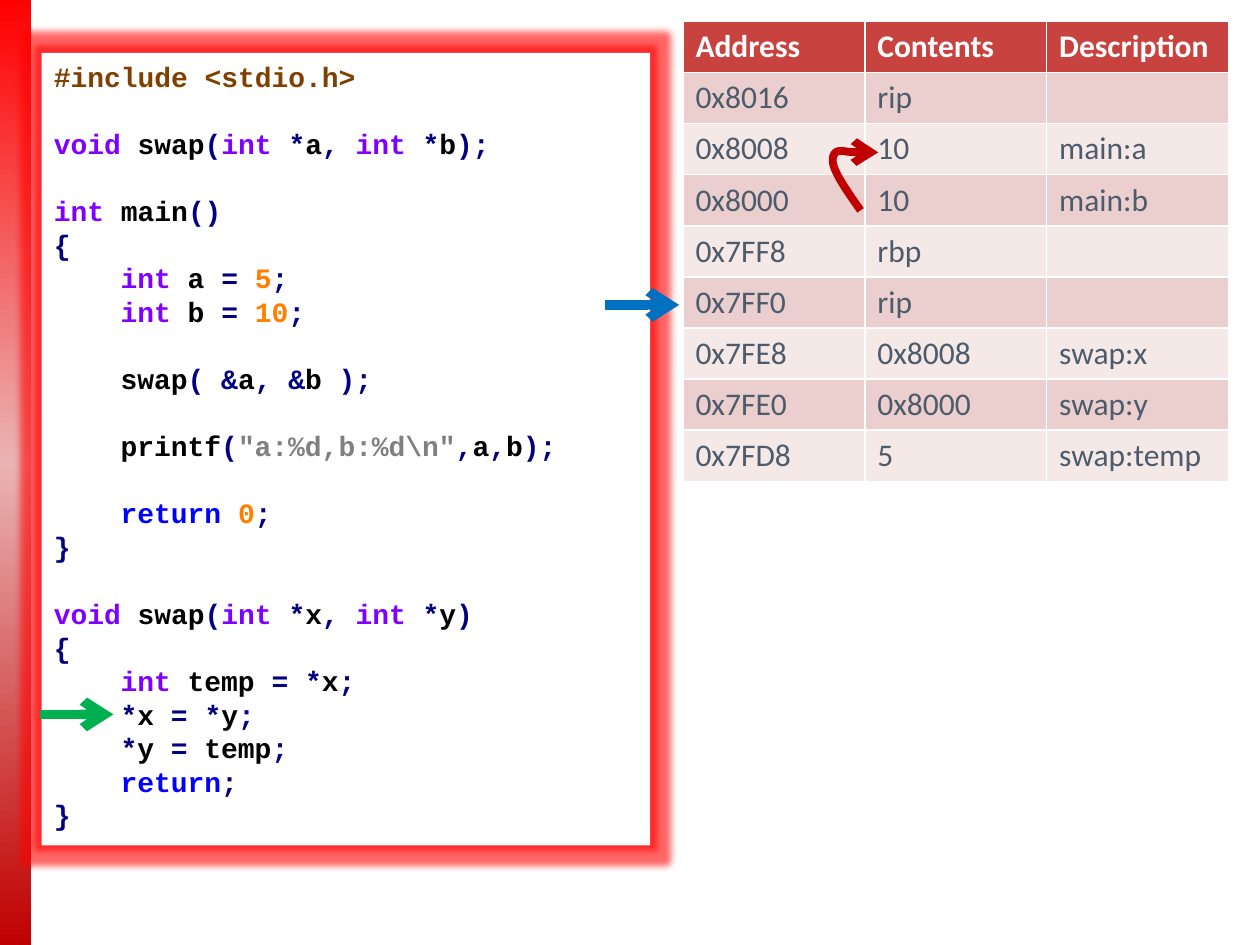
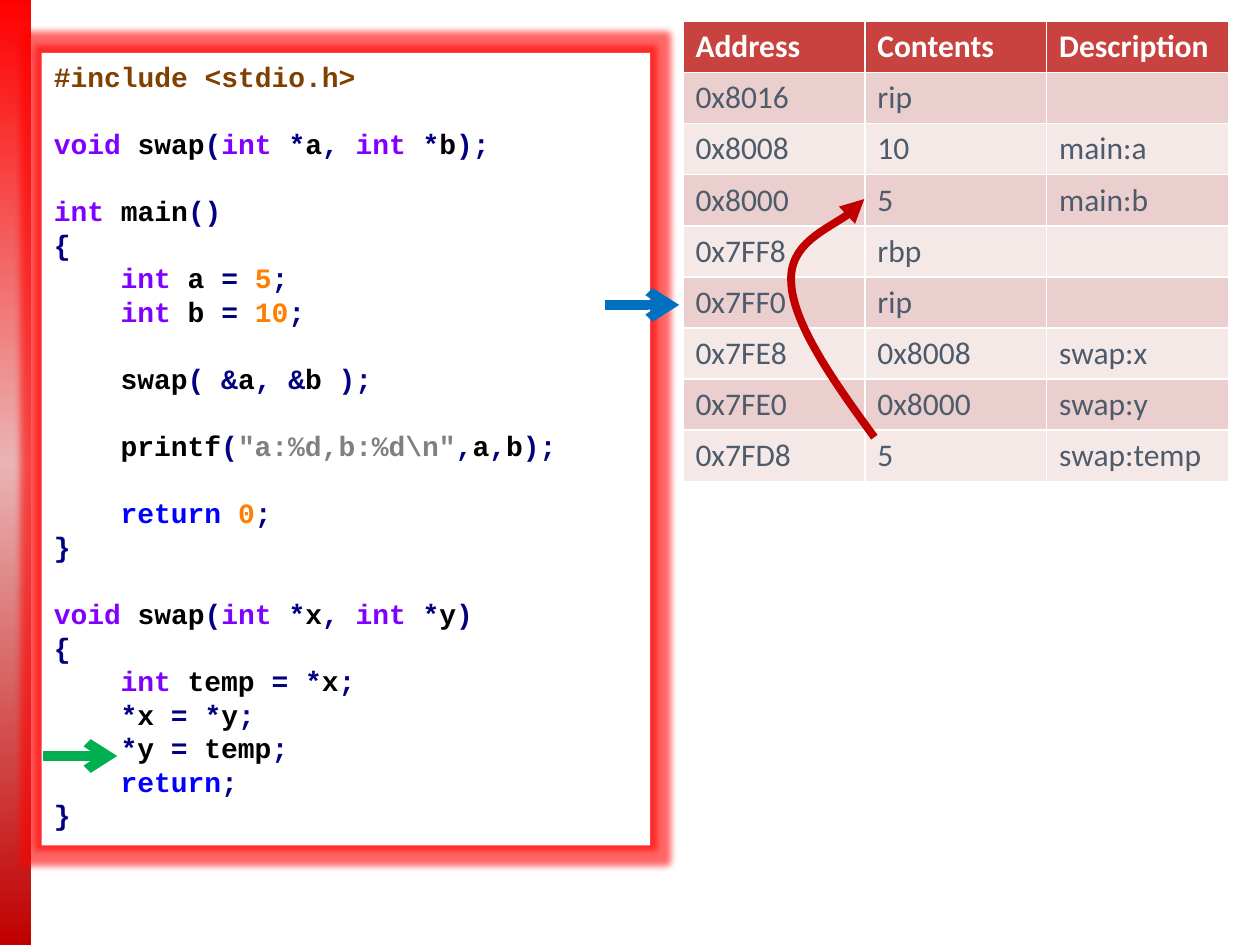
from dataclasses import dataclass
from itertools import groupby

from pptx import Presentation
from pptx.dml.color import RGBColor
from pptx.enum.shapes import MSO_CONNECTOR, MSO_SHAPE
from pptx.enum.text import MSO_ANCHOR, PP_ALIGN
from pptx.oxml import parse_xml
from pptx.oxml.ns import nsdecls, qn
from pptx.util import Inches, Pt

COLORS = {
    "white": "FFFFFF",
    "band_top": "FF0000",
    "band_middle": "E9B4B3",
    "band_bottom": "C00000",
    "glow": "FF0000",
    "directive": "804000",
    "type": "8000FF",
    "keyword": "0000FF",
    "number": "FF8000",
    "string": "808080",
    "symbol": "000080",
    "plain": "000000",
    "header": "C84340",
    "odd_row": "EBCFCF",
    "even_row": "F5E9E8",
    "cell_text": "4D5B6B",
    "current_line": "00B050",
    "stack_frame": "0070C0",
    "copy": "C00000",
}
WORDS = {"void": "type", "int": "type", "return": "keyword"}
CODE_FONT = "Courier New"
TABLE_FONT = "Calibri"
LINE_HEIGHT = Pt(19.2)
INDENT = Inches(0.53)

PROGRAM = r"""#include <stdio.h>

void swap(int *a, int *b);

int main()
{
    int a = 5;
    int b = 10;

    swap( &a, &b );

    printf("a:%d,b:%d\n",a,b);

    return 0;
}

void swap(int *x, int *y)
{
    int temp = *x;
    *x = *y;
    *y = temp;
    return;
}"""


@dataclass
class Arrow:
    start: tuple[float, float]
    end: tuple[float, float]
    color: str


@dataclass
class Curve:
    points: list[tuple[float, float]]
    head: str


@dataclass
class Step:
    main_b: str
    current_line: Arrow
    copy: Curve


STACK_ARROW = Arrow((4.8, 2.42), (5.39, 2.42), "stack_frame")
STEPS = [
    Step(
        "10",
        Arrow((0.32, 5.67), (0.9, 5.67), "current_line"),
        Curve([(6.83, 1.67), (6.71, 1.5), (6.59, 1.33), (6.61, 1.25),
               (6.63, 1.17), (6.97, 1.23), (6.97, 1.21)], "arrow"),
    ),
    Step(
        "5",
        Arrow((0.34, 6), (0.93, 6), "current_line"),
        Curve([(6.94, 3.47), (6.61, 3.02), (6.29, 2.56), (6.28, 2.24),
               (6.26, 1.93), (6.88, 1.65), (6.86, 1.58)], "triangle"),
    ),
]


def rgb(name: str) -> RGBColor:
    return RGBColor.from_string(COLORS[name])


def add_text(para, text: str, *, font: str, size: float, color: str, bold: bool = False) -> None:
    span = para.add_run()
    span.text = text
    span.font.name = font
    span.font.size = Pt(size)
    span.font.bold = bold
    span.font.color.rgb = rgb(color)


def add_rectangle(page, left: float, top: float, width: float, height: float):
    box = page.shapes.add_shape(
        MSO_SHAPE.RECTANGLE, Inches(left), Inches(top), Inches(width), Inches(height))
    box.shadow.inherit = False
    box.line.fill.background()
    return box


def add_band(page, layout) -> None:
    band = add_rectangle(page, 0, 0, 0.25, 7.5)
    band.fill.background()
    stops = "".join(
        f'<a:gs pos="{position}"><a:srgbClr val="{COLORS[name]}"/></a:gs>'
        for position, name in ((0, "band_top"), (49000, "band_middle"), (100000, "band_bottom")))
    gradient = parse_xml(
        f'<a:gradFill {nsdecls("a")}><a:gsLst>{stops}</a:gsLst>'
        '<a:lin ang="5400000" scaled="0"/></a:gradFill>')
    properties = band.element.find(qn("p:spPr"))
    properties.replace(properties.find(qn("a:noFill")), gradient)
    layout.shapes.element.append(band.element)


def character_kind(character: str) -> str:
    if character.isspace():
        return "plain"
    return "word" if character.isalnum() else "symbol"


def code_tokens(line: str) -> list[tuple[str, str]]:
    if line.startswith("#"):
        return [(line, "directive")]
    tokens = []
    for index, piece in enumerate(line.split('"')):
        if index % 2:
            tokens.append((f'"{piece}"', "string"))
            continue
        for kind, group in groupby(piece, character_kind):
            text = "".join(group)
            if kind == "word":
                kind = "number" if text.isdigit() else WORDS.get(text, "plain")
            tokens.append((text, kind))
    return tokens


def add_program(page) -> None:
    box = add_rectangle(page, 0.33, 0.42, 4.83, 6.29)
    box.fill.solid()
    box.fill.fore_color.rgb = rgb("white")
    box.element.find(".//" + qn("a:effectLst")).append(parse_xml(
        f'<a:glow {nsdecls("a")} rad="101600"><a:srgbClr val="{COLORS["glow"]}">'
        '<a:alpha val="60000"/></a:srgbClr></a:glow>'))
    frame = box.text_frame
    frame.word_wrap = True
    frame.vertical_anchor = MSO_ANCHOR.TOP
    para = frame.paragraphs[0]
    gap = Pt(0)
    for line in PROGRAM.splitlines():
        if not line:
            gap = LINE_HEIGHT
            continue
        if para.runs:
            para = frame.add_paragraph()
        para.alignment = PP_ALIGN.LEFT
        para.line_spacing = LINE_HEIGHT
        para.space_before = gap
        gap = Pt(0)
        if line.startswith(" "):
            properties = para._p.get_or_add_pPr()
            properties.set("marL", str(INDENT))
            properties.set("indent", "0")
        for text, color in code_tokens(line.strip()):
            add_text(para, text, font=CODE_FONT, size=16, color=color, bold=True)


def add_stack(page, main_b: str) -> None:
    rows = [
        ("Address", "Contents", "Description"),
        ("0x8016", "rip", ""),
        ("0x8008", "10", "main:a"),
        ("0x8000", main_b, "main:b"),
        ("0x7FF8", "rbp", ""),
        ("0x7FF0", "rip", ""),
        ("0x7FE8", "0x8008", "swap:x"),
        ("0x7FE0", "0x8000", "swap:y"),
        ("0x7FD8", "5", "swap:temp"),
    ]
    table = page.shapes.add_table(
        len(rows), 3, Inches(5.42), Inches(0.17), Inches(4.33), Inches(3.65)).table
    for row_index, row in enumerate(rows):
        is_header = row_index == 0
        fill = "header" if is_header else "odd_row" if row_index % 2 else "even_row"
        for column_index, text in enumerate(row):
            cell = table.cell(row_index, column_index)
            cell.fill.solid()
            cell.fill.fore_color.rgb = rgb(fill)
            if text:
                add_text(cell.text_frame.paragraphs[0], text, font=TABLE_FONT, size=18,
                         color="white" if is_header else "cell_text", bold=is_header)


def format_line(shape, color: str, width: float, head: str) -> None:
    shape.line.color.rgb = rgb(color)
    shape.line.width = Pt(width)
    shape.element.find(".//" + qn("a:ln")).append(
        parse_xml(f'<a:tailEnd {nsdecls("a")} type="{head}"/>'))


def add_arrow(page, arrow: Arrow) -> None:
    ends = [Inches(value) for value in arrow.start + arrow.end]
    connector = page.shapes.add_connector(MSO_CONNECTOR.STRAIGHT, *ends)
    format_line(connector, arrow.color, 5.5, "arrow")
    connector.element.find(qn("p:spPr")).append(parse_xml(f'<a:effectLst {nsdecls("a")}/>'))


def add_curve(page, curve: Curve) -> None:
    points = [(Inches(x), Inches(y)) for x, y in curve.points]
    builder = page.shapes.build_freeform(*points[0])
    builder.add_line_segments(points[1:], close=False)
    shape = builder.convert_to_shape()
    shape.shadow.inherit = False
    shape.fill.background()
    format_line(shape, "copy", 4.5, curve.head)
    outline = shape.element.find(".//" + qn("a:path"))
    segments = outline.findall(qn("a:lnTo"))
    for first in range(0, len(segments), 3):
        bezier = parse_xml(f'<a:cubicBezTo {nsdecls("a")}/>')
        for segment in segments[first:first + 3]:
            bezier.append(segment[0])
            outline.remove(segment)
        outline.append(bezier)


def main() -> None:
    deck = Presentation()
    deck.slide_width = Inches(10)
    deck.slide_height = Inches(7.5)
    layout = deck.slide_layouts[6]
    pages = [deck.slides.add_slide(layout) for _ in STEPS]
    add_band(pages[0], layout)
    for page, step in zip(pages, STEPS):
        add_program(page)
        add_stack(page, step.main_b)
        add_arrow(page, step.current_line)
        add_curve(page, step.copy)
        add_arrow(page, STACK_ARROW)
    deck.save("out.pptx")


if __name__ == "__main__":
    main()
